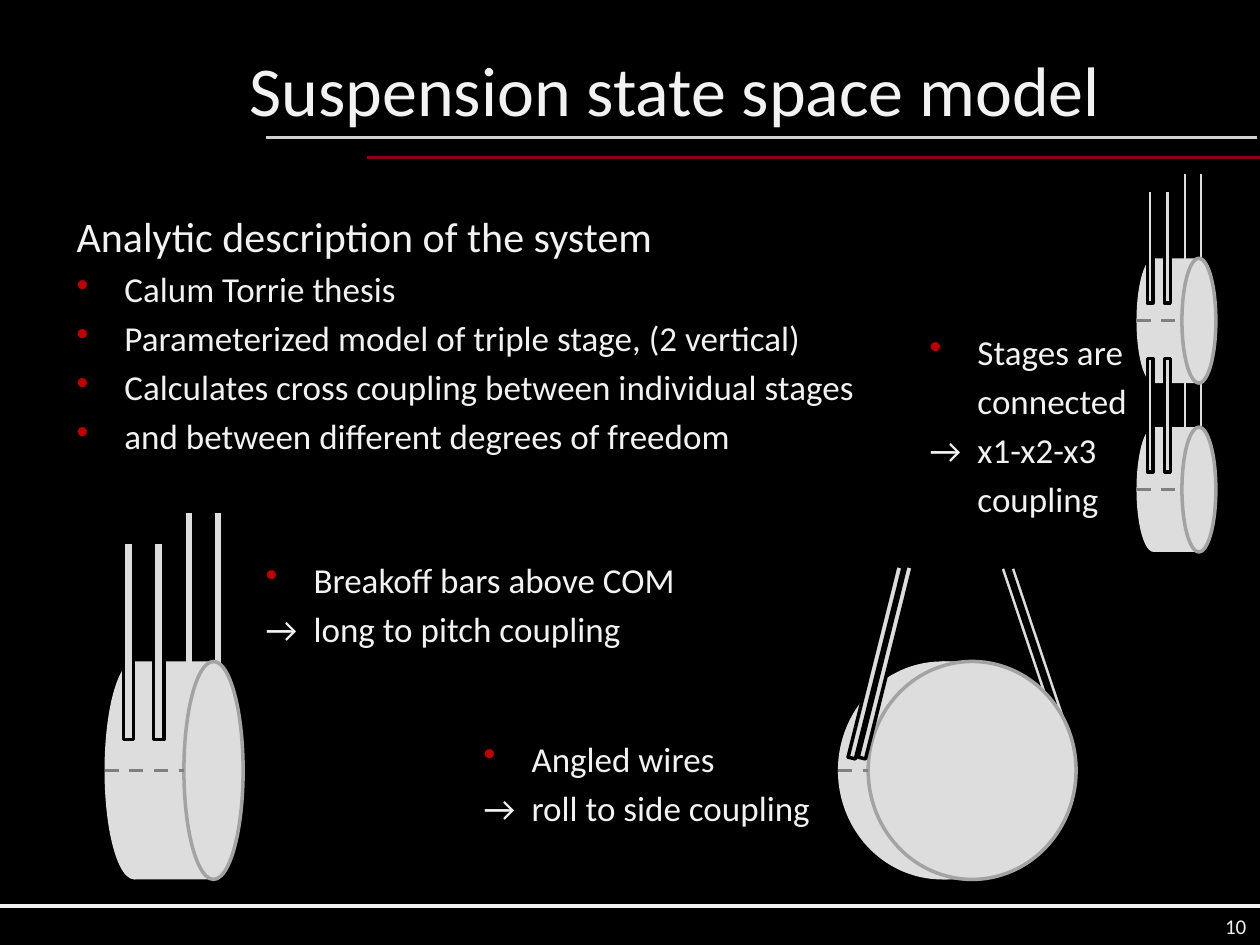
from lxml import etree
from pptx import Presentation
from pptx.dml.color import RGBColor
from pptx.enum import dml, shapes, text
from pptx.oxml import ns
from pptx.util import Inches, Pt

WHITE, RED, BLACK = "F2F2F2", "C00000", "000000"
GLASS, RIM, AXIS = "DDDDDD", "A3A3A3", "808080"
RECT, OVAL = shapes.MSO_SHAPE.RECTANGLE, shapes.MSO_SHAPE.OVAL
HANG = Inches(0.38)


def color(hex_value):
    return RGBColor.from_string(hex_value)


def add_rule(slide, start, end, line, dashed=False):
    points = [Inches(v) for v in (*start, *end)]
    rule = slide.shapes.add_connector(shapes.MSO_CONNECTOR.STRAIGHT, *points)
    rule.line.color.rgb = color(line)
    rule.line.width = Pt(2)
    if dashed:
        rule.line.dash_style = dml.MSO_LINE.DASH
    etree.SubElement(rule._element.spPr, ns.qn("a:effectLst"))


def add_solid(slide, kind, box, line=None, rotation=0):
    solid = slide.shapes.add_shape(kind, *[Inches(v) for v in box])
    solid.shadow.inherit = False
    solid.fill.solid()
    solid.fill.fore_color.rgb = color(GLASS)
    solid.rotation = rotation
    if line:
        solid.line.color.rgb = color(line)
        solid.line.width = Pt(2)
    else:
        solid.line.fill.background()


def write(paragraph, words, size=20, align=None, bullet=False, hang=False, before=0):
    paragraph.text = words
    paragraph.alignment = align
    paragraph.space_before = Pt(before)
    props = paragraph._p.get_or_add_pPr()
    if hang:
        props.set("marL", str(HANG))
        props.set("indent", str(-HANG))
    if bullet:
        tint = etree.SubElement(props, ns.qn("a:buClr"))
        etree.SubElement(tint, ns.qn("a:srgbClr"), val=RED)
        etree.SubElement(props, ns.qn("a:buChar"), char="•")
    font = paragraph.font
    font.name, font.size = "Calibri", Pt(size)
    font.color.rgb = color(WHITE)


def add_frame(slide, box, anchor=text.MSO_ANCHOR.TOP):
    frame = slide.shapes.add_textbox(*[Inches(v) for v in box]).text_frame
    frame.word_wrap = True
    frame.vertical_anchor = anchor
    return frame


def add_notes(slide, box, lines, heading=None):
    """Lines starting with an arrow or a tab carry no bullet."""
    frame = add_frame(slide, box)
    entries = ([heading] if heading else []) + lines
    for i, words in enumerate(entries):
        paragraph = frame.add_paragraph() if i else frame.paragraphs[0]
        is_heading = words == heading
        write(paragraph, words, size=24 if is_heading else 20, hang=True,
              bullet=not is_heading and words[0] not in "→\t",
              before=4 if i else 0)


def add_header_footer(slide, title_box, number_box):
    add_rule(slide, (0, 7.19), (10, 7.19), WHITE)
    add_rule(slide, (2.91, 1.25), (10, 1.25), "8C020F")
    add_rule(slide, (2.11, 1.09), (9.98, 1.09), "D1D1D1")
    title = slide.shapes.title
    title.left, title.top, title.width, title.height = [Inches(v) for v in title_box]
    title.text_frame.vertical_anchor = text.MSO_ANCHOR.MIDDLE
    write(title.text_frame.paragraphs[0], "Suspension state space model",
          size=40, align=text.PP_ALIGN.RIGHT)
    number = add_frame(slide, number_box, text.MSO_ANCHOR.MIDDLE)
    write(number.paragraphs[0], "10", size=12, align=text.PP_ALIGN.RIGHT)


def add_cylinder(slide, box, depth):
    """Rear face, body and rimmed front face, shifted right by depth."""
    x, y, width, height = box
    face = width - depth
    add_solid(slide, OVAL, (x, y, face, height))
    add_solid(slide, RECT, (x + face / 2, y, depth, height))
    add_solid(slide, OVAL, (x + depth, y, face, height), RIM)


def add_axis(slide, box, depth):
    x, y, _, height = box
    middle = y + height / 2
    add_rule(slide, (x, middle), (x + depth, middle), AXIS, dashed=True)


def add_wires(slide, box, offsets, rise):
    x, y, _, height = box
    scale = height / 1.73
    for offset in offsets:
        add_solid(slide, RECT, (x + offset * scale, y - rise * scale,
                                0.08 * scale, 1.57 * scale), BLACK)


def add_side_masses(slide, boxes):
    """Masses seen from the side, listed from top to bottom."""
    for box in reversed(boxes):
        add_wires(slide, box, (0.63, 0.86), 1.19)
    for box in boxes:
        depth = 0.63 * box[3] / 1.73
        add_cylinder(slide, box, depth)
        add_wires(slide, box, (0.15, 0.39), 0.95)
        add_axis(slide, box, depth)


def add_front_mass(slide, box):
    x, y, depth = box[0], box[1], 0.24
    # Rear wires, body, then front wires
    for offset in (1.53, 1.61):
        add_solid(slide, RECT, (x + offset, y - 0.79, 0.05, 1.57), BLACK, 341.5)
    add_cylinder(slide, box, depth)
    add_axis(slide, box, depth)
    for offset in (0.27, 0.35):
        add_solid(slide, RECT, (x + offset, y - 0.78, 0.06, 1.57), BLACK, 14)


def main():
    deck = Presentation()
    deck.slide_width, deck.slide_height = Inches(10), Inches(7.5)
    slide = deck.slides.add_slide(deck.slide_layouts[5])
    slide.background.fill.solid()
    slide.background.fill.fore_color.rgb = color(BLACK)

    add_header_footer(slide, (1.54, 0.31, 7.29, 0.79), (7.66, 7.19, 2.33, 0.32))

    # Overview
    add_notes(slide, (0.51, 1.62, 6.46, 2.52), [
        "Calum Torrie thesis",
        "Parameterized model of triple stage, (2 vertical)",
        "Calculates cross coupling between individual stages",
        "and between different degrees of freedom",
    ], heading="Analytic description of the system")

    # Suspended masses
    add_side_masses(slide, [(0.83, 5.25, 1.1, 1.73)])
    add_front_mass(slide, (6.65, 5.25, 1.89, 1.73))
    add_side_masses(slide, [(9.02, top, 0.63, 0.99) for top in (2.05, 3.39)])

    # Coupling notes
    add_notes(slide, (2.01, 4.38, 3.62, 1.02),
              ["Breakoff bars above COM", "→\tlong to pitch coupling"])
    add_notes(slide, (3.74, 5.8, 3.62, 1.02),
              ["Angled wires", "→\troll to side coupling"])
    add_notes(slide, (7.28, 2.57, 1.97, 1.02),
              ["Stages are", "\tconnected", "→\tx1-x2-x3", "\tcoupling"])

    deck.save("out.pptx")


if __name__ == "__main__":
    main()
